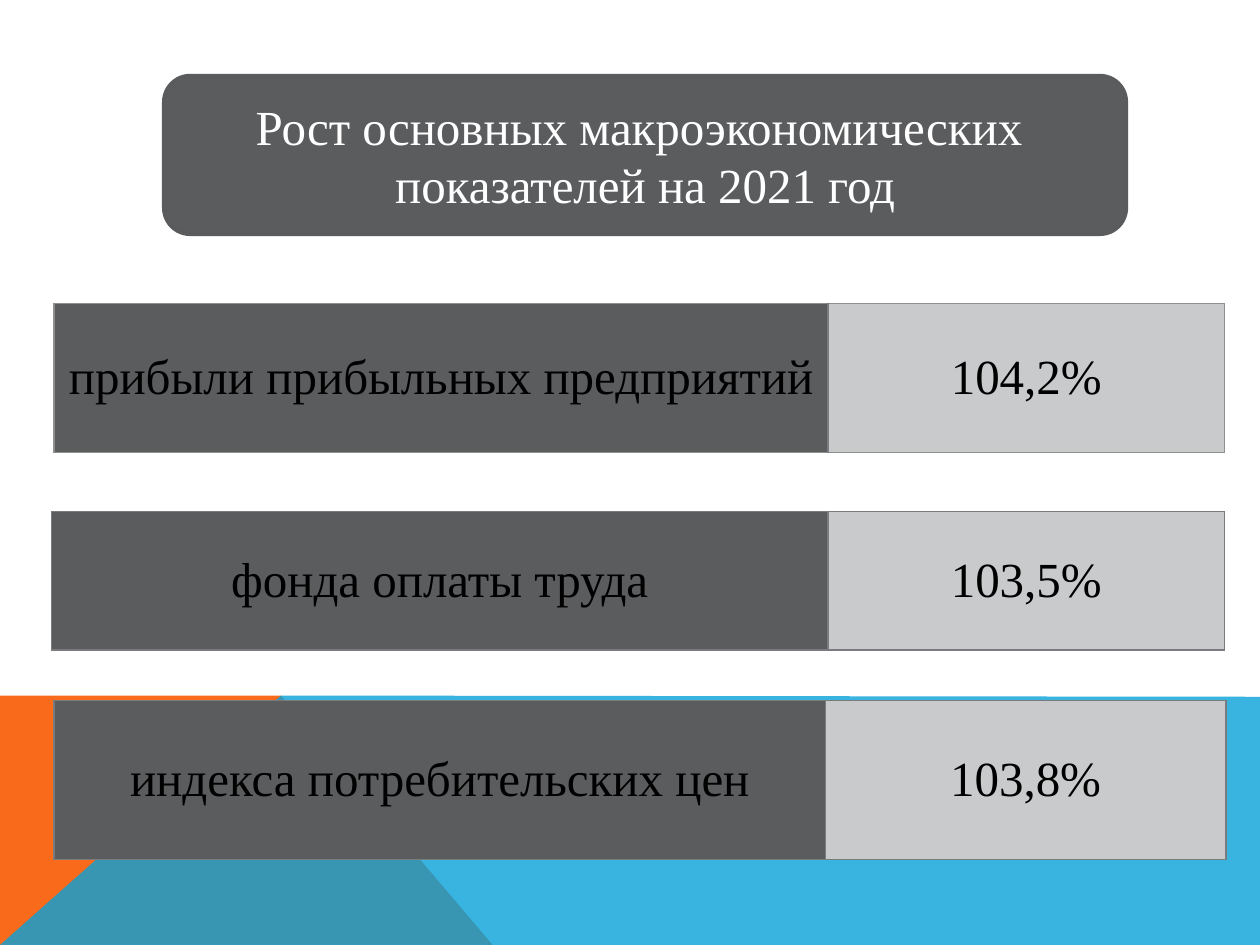
import dataclasses

import lxml.etree
import pptx
import pptx.dml.color
import pptx.enum.shapes
import pptx.enum.text
import pptx.oxml.ns
import pptx.util

Inches = pptx.util.Inches
qn = pptx.oxml.ns.qn

FONT = "Times New Roman"
DARK, LIGHT = "5B5C5E", "C9CACB"
BORDER, SOFT_BORDER = "797B7E", "8F8F8D"


@dataclasses.dataclass
class Indicator:
    label: str
    value: str
    left: float
    top: float
    height: float
    widths: tuple[float, float]
    border: str = BORDER


INDICATORS = [
    Indicator("прибыли прибыльных предприятий", "104,2%", 0.43, 2.41, 1.18, (6.14, 3.15), SOFT_BORDER),
    Indicator("фонда оплаты труда", "103,5%", 0.41, 4.06, 1.1, (6.16, 3.15)),
    Indicator("индекса потребительских цен", "103,8%", 0.43, 5.56, 1.26, (6.12, 3.18)),
]


def set_fill(fill, color: str) -> None:
    fill.solid()
    fill.fore_color.rgb = pptx.dml.color.RGBColor.from_string(color)


def write_text(frame, text: str, color: str) -> None:
    """Write centred lines in the slide's single text style."""
    frame.text = text
    frame.vertical_anchor = pptx.enum.text.MSO_ANCHOR.MIDDLE
    for paragraph in frame.paragraphs:
        paragraph.alignment = pptx.enum.text.PP_ALIGN.CENTER
        for span in paragraph.runs:
            span.font.name = FONT
            span.font.size = pptx.util.Pt(28)
            set_fill(span.font.fill, color)


def add_polygon(page, points: list[tuple[float, float]], color: str, opacity: int = 100) -> None:
    corners = [(Inches(x), Inches(y)) for x, y in points]
    builder = page.shapes.build_freeform(*corners[0], scale=1.0)
    builder.add_line_segments(corners[1:], close=True)
    shape = builder.convert_to_shape()
    shape.shadow.inherit = False
    shape.line.fill.background()
    set_fill(shape.fill, color)
    if opacity < 100:
        tint = shape.fill._xPr.find(".//" + qn("a:srgbClr"))
        lxml.etree.SubElement(tint, qn("a:alpha"), val=str(opacity * 1000))


def set_borders(cell, colors: dict[str, str]) -> None:
    """Put one-point lines on the cell sides L, R, T and B."""
    properties = cell._tc.get_or_add_tcPr()
    for index, side in enumerate("LRTB"):
        line = lxml.etree.Element(qn(f"a:ln{side}"), w=str(pptx.util.Pt(1)))
        solid = lxml.etree.SubElement(line, qn("a:solidFill"))
        lxml.etree.SubElement(solid, qn("a:srgbClr"), val=colors[side])
        properties.insert(index, line)


def add_indicator(page, item: Indicator) -> None:
    frame = page.shapes.add_table(1, 2, Inches(item.left), Inches(item.top),
                                  Inches(sum(item.widths)), Inches(item.height))
    table = frame.table
    table.first_row = table.horz_banding = False
    for column, width in zip(table.columns, item.widths):
        column.width = Inches(width)
    cells = zip(table.rows[0].cells, (item.label, item.value), (DARK, LIGHT), "RL")
    for cell, text, color, inner_side in cells:
        write_text(cell.text_frame, text, "000000")
        cell.vertical_anchor = pptx.enum.text.MSO_ANCHOR.MIDDLE
        set_fill(cell.fill, color)
        set_borders(cell, dict.fromkeys("LRTB", item.border) | {inner_side: BORDER})


def add_title(page) -> None:
    area = (Inches(1.3), Inches(0.6), Inches(7.64), Inches(1.26))
    panel = page.shapes.add_shape(pptx.enum.shapes.MSO_SHAPE.ROUNDED_RECTANGLE, *area)
    panel.shadow.inherit = False
    set_fill(panel.fill, DARK)
    set_fill(panel.line.fill, "5A5B5D")
    panel.line.width = pptx.util.Pt(2)

    title = page.shapes.title
    title.left, title.top, title.width, title.height = area
    write_text(title.text_frame, "Рост основных макроэкономических \nпоказателей на 2021 год", "FFFFFF")
    title.text_frame.auto_size = pptx.enum.text.MSO_AUTO_SIZE.NONE
    panel._element.addnext(title._element)  # keep the title above its panel


def main() -> None:
    deck = pptx.Presentation()
    deck.slide_width, deck.slide_height = Inches(10), Inches(7.5)
    page = deck.slides.add_slide(deck.slide_layouts[5])

    # Coloured band at the foot
    add_polygon(page, [(0, 7.5), (0, 5.52), (2.23, 5.52), (3.91, 7.5)], "F96A1B")
    add_polygon(page, [(0, 7.5), (2.23, 5.52), (10, 5.53), (10, 7.5)], "08A1D9", opacity=80)

    # Heading and indicators
    add_title(page)
    for item in INDICATORS:
        add_indicator(page, item)

    deck.save("out.pptx")


if __name__ == "__main__":
    main()
